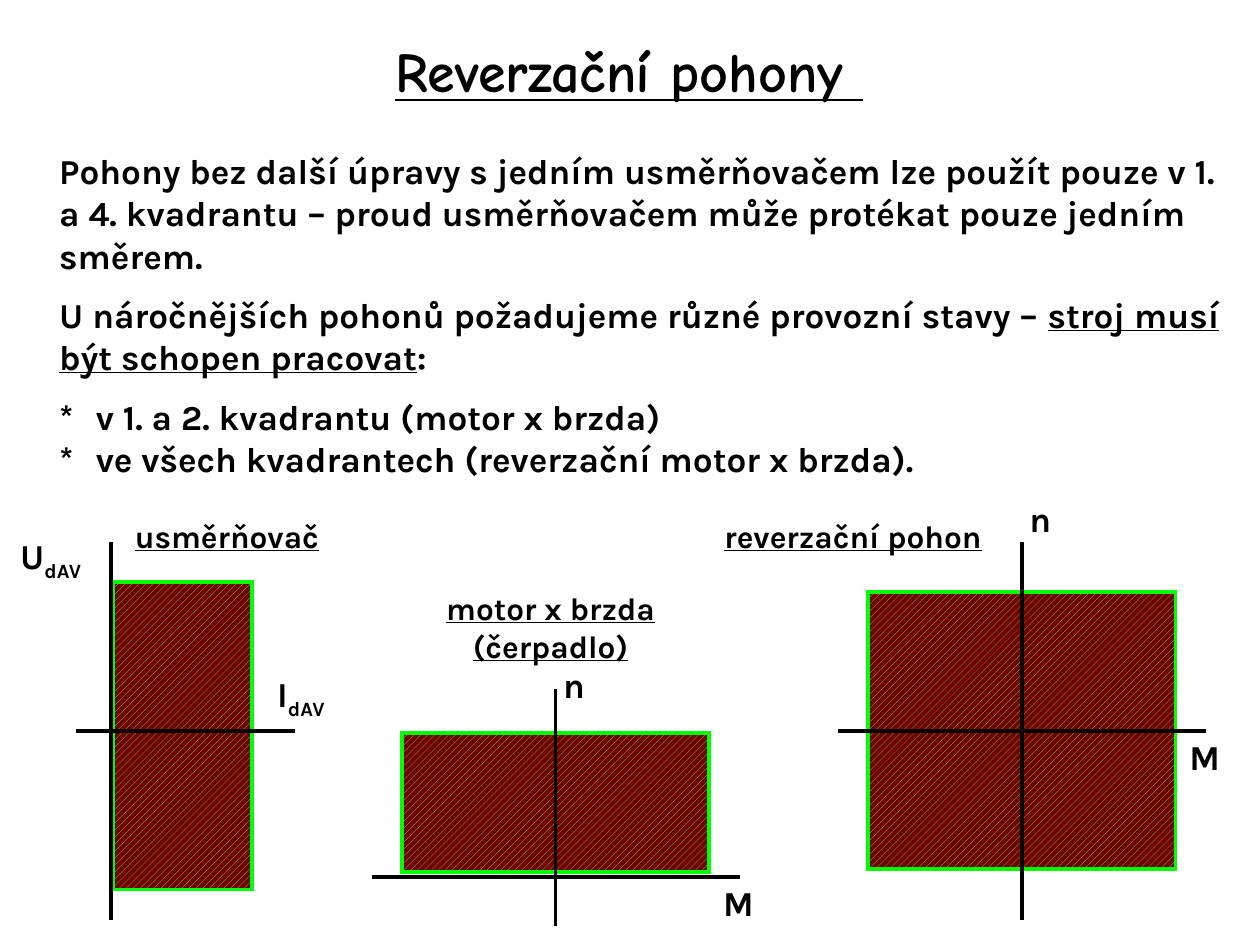
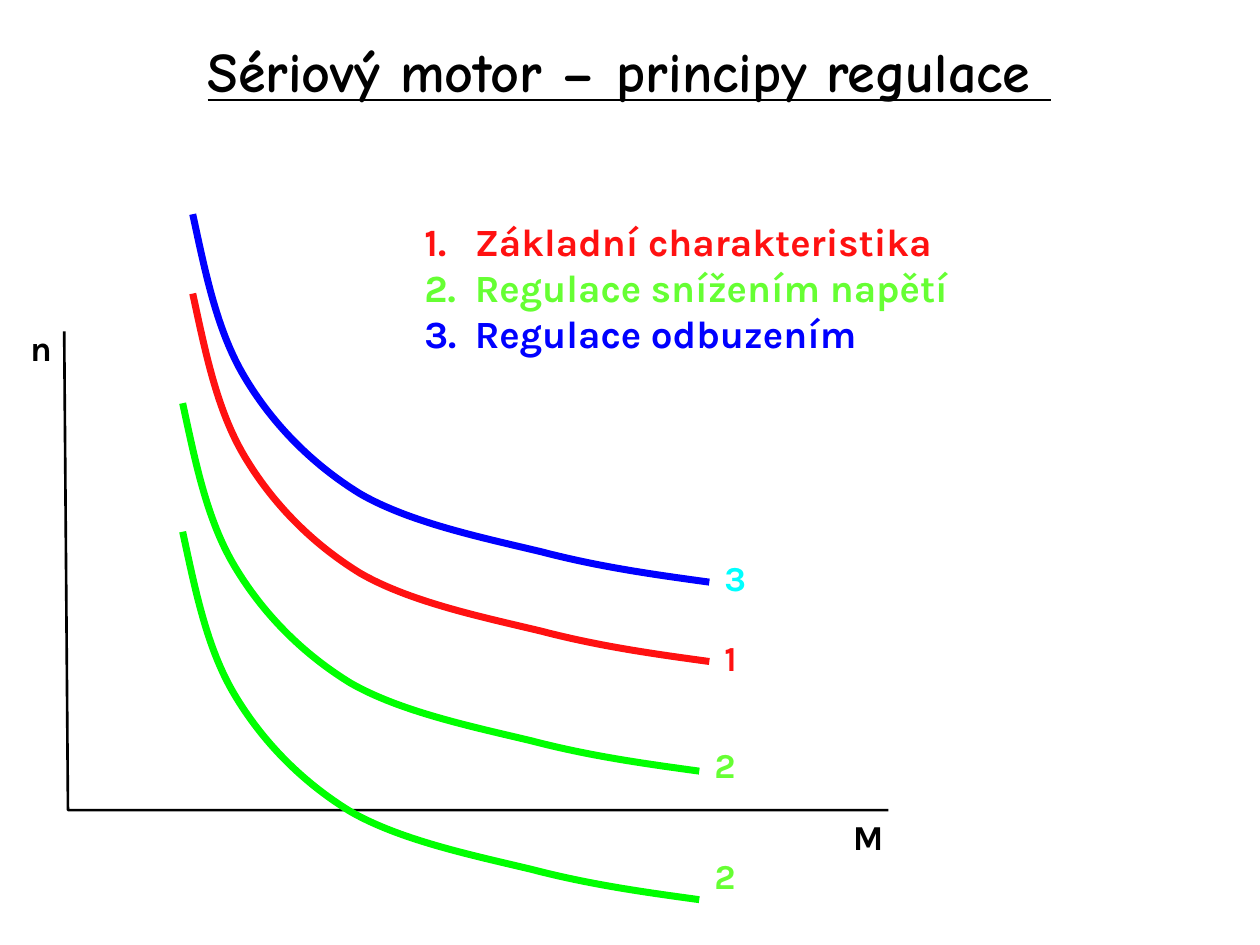
from dataclasses import dataclass
from lxml.etree import SubElement
from pptx import Presentation
from pptx.dml.color import RGBColor
from pptx.enum.dml import MSO_PATTERN
from pptx.enum.shapes import MSO_CONNECTOR, MSO_SHAPE
from pptx.enum.text import MSO_ANCHOR, MSO_AUTO_SIZE, PP_ALIGN
from pptx.oxml.ns import qn
from pptx.util import Inches, Pt


@dataclass(frozen=True)
class Theme:
    black: str = "000000"
    red: str = "FF1111"
    green: str = "00FF00"
    light_green: str = "66FF33"
    blue: str = "0000FF"
    cyan: str = "00FFFF"
    maroon: str = "720000"
    title_font: str = "Comic Neue"
    text_font: str = "Karla"
    title_size: int = 32
    legend_size: int = 22
    text_size: int = 20
    caption_size: int = 18


THEME = Theme()
TITLE_PLACE = (0.19, 0.2, 9.61, 0.72)
UNDERLINED = {"underline": True}
SUBSCRIPT = {"baseline": "-25000"}

DRIVES_TITLE = "Reverzační pohony "
DRIVES_PLACE = (0.43, 1.15, 9.41, 2.75)
# Each paragraph: space before in points, then its runs
DRIVES_TEXT = [
    (0, [("Pohony bez další úpravy s jedním usměrňovačem lze použít pouze v 1. "
          "a 4. kvadrantu – proud usměrňovačem může protékat pouze jedním směrem.", {})]),
    (10, [("U náročnějších pohonů požadujeme různé provozní stavy – ", {}),
          ("stroj musí být schopen pracovat", UNDERLINED), (":", {})]),
    (10, [("*\tv 1. a 2. kvadrantu (motor x brzda)", {})]),
    (0, [("*\tve všech kvadrantech (reverzační motor x brzda).", {})]),
]
STAR_TAB = 0.29

# area: left, top, width, height; origin: where the axes cross;
# vertical and horizontal: start and end of each axis
QUADRANTS = [
    {"area": (6.89, 4.7, 2.44, 2.2), "origin": (8.11, 5.8),
     "vertical": (4.3, 7.3), "horizontal": (6.65, 9.57),
     "labels": [((8.13, 3.91, 0.26, 0.41), [("n", {})]),
                ((9.4, 5.8, 0.33, 0.41), [("M", {})])],
     "caption": ((5.71, 4.06, 2.24, 0.38), ["reverzační pohon"], PP_ALIGN.LEFT)},
    {"area": (3.19, 5.82, 2.44, 1.1), "origin": (4.41, 6.96),
     "vertical": (5.47, 7.35), "horizontal": (2.95, 5.87),
     "labels": [((4.43, 5.23, 0.26, 0.41), [("n", {})]),
                ((5.7, 6.96, 0.33, 0.41), [("M", {})])],
     "caption": ((3.5, 4.64, 1.74, 0.67), ["motor x brzda", "(čerpadlo)"], PP_ALIGN.CENTER)},
    {"area": (0.9, 4.62, 1.1, 2.44), "origin": (0.88, 5.8),
     "vertical": (4.3, 7.3), "horizontal": (0.6, 2.34),
     "labels": [((2.16, 5.32, 0.59, 0.42), [("I", {}), ("dAV", SUBSCRIPT)]),
                ((0.12, 4.22, 0.66, 0.42), [("U", {}), ("dAV", SUBSCRIPT)])],
     "caption": ((1.03, 4.06, 1.6, 0.38), ["usměrňovač"], PP_ALIGN.LEFT)},
]

MOTOR_TITLE = "Sériový motor – principy regulace "
MOTOR_AXES = [(0.51, 2.63), (0.54, 6.43), (7.05, 6.43)]
MOTOR_AXIS_LABELS = [("n", (0.2, 2.55, 0.26, 0.41)), ("M", (6.73, 6.43, 0.33, 0.41))]
LEGEND_PLACE = (3.27, 1.68, 5.83, 1.21)
LEGEND_INDENT = 0.4
LEGEND = [
    ("1.\tZákladní charakteristika", THEME.red),
    ("2.\tRegulace snížením napětí", THEME.light_green),
    ("3.\tRegulace odbuzením", THEME.blue),
]
# Curve start, curve colour, number, number's left and top, number's colour
CURVES = [
    ((1.53, 2.33), THEME.red, "1", (5.71, 5.01), THEME.red),
    ((1.45, 3.2), THEME.green, "2", (5.63, 5.86), THEME.light_green),
    ((1.45, 4.22), THEME.green, "2", (5.63, 6.74), THEME.light_green),
    ((1.53, 1.7), THEME.blue, "3", (5.71, 4.38), THEME.cyan),
]
# Bézier control points of the characteristic, measured from its start
CHARACTERISTIC = [
    (0, 0),
    (0.1, 0.46), (0.19, 0.92), (0.41, 1.29),
    (0.63, 1.66), (0.94, 1.98), (1.33, 2.22),
    (1.73, 2.45), (2.31, 2.57), (2.77, 2.68),
    (3.23, 2.8), (3.66, 2.86), (4.1, 2.92),
]


def inches(lengths):
    return [Inches(length) for length in lengths]


def add_run(paragraph, text, color=THEME.black, size=THEME.text_size,
            font=THEME.text_font, baseline=None, **formats):
    run = paragraph.add_run()
    run.text = text
    formats = {"name": font, "size": Pt(size), "bold": True, **formats}
    for attribute, value in formats.items():
        setattr(run.font, attribute, value)
    run.font.color.rgb = RGBColor.from_string(color)
    if baseline:
        run._r.get_or_add_rPr().set("baseline", baseline)


def add_frame(slide, place, inset=0.04, **formats):
    frame = slide.shapes.add_textbox(*inches(place)).text_frame
    formats = {"word_wrap": True, "auto_size": MSO_AUTO_SIZE.SHAPE_TO_FIT_TEXT, **formats}
    if inset is not None:
        sides = ("left", "top", "right", "bottom")
        formats.update({f"margin_{side}": Inches(inset) for side in sides})
    for attribute, value in formats.items():
        setattr(frame, attribute, value)
    return frame


def paragraphs_for(frame, items):
    """Yield a paragraph of the frame with each item."""
    for index, item in enumerate(items):
        yield (frame.add_paragraph() if index else frame.paragraphs[0]), item


def add_label(slide, place, lines, align=PP_ALIGN.LEFT, **formats):
    """Short unwrapped text; each line is a list of (text, formats) runs."""
    frame = add_frame(slide, place, word_wrap=False, vertical_anchor=MSO_ANCHOR.MIDDLE)
    for paragraph, runs in paragraphs_for(frame, lines):
        paragraph.alignment = align
        for text, extra in runs:
            add_run(paragraph, text, **formats, **extra)


def add_titled_slide(deck, title):
    slide = deck.slides.add_slide(deck.slide_layouts[6])
    frame = add_frame(slide, TITLE_PLACE, inset=None, auto_size=MSO_AUTO_SIZE.NONE,
                      vertical_anchor=MSO_ANCHOR.MIDDLE)
    heading = frame.paragraphs[0]
    heading.alignment = PP_ALIGN.CENTER
    add_run(heading, title, size=THEME.title_size, font=THEME.title_font, underline=True)
    return slide


def set_line(shape, color, width):
    shape.line.color.rgb = RGBColor.from_string(color)
    shape.line.width = Pt(width)


def add_area(slide, place):
    area = slide.shapes.add_shape(MSO_SHAPE.RECTANGLE, *inches(place))
    area.shadow.inherit = False
    area.fill.patterned()
    area.fill.pattern = MSO_PATTERN.WIDE_UPWARD_DIAGONAL
    area.fill.fore_color.rgb = RGBColor.from_string(THEME.light_green)
    area.fill.back_color.rgb = RGBColor.from_string(THEME.maroon)
    set_line(area, THEME.green, 2.25)
    SubElement(area.line._get_or_add_ln(), qn("a:miter"), lim="800000")


def add_axis(slide, start, end):
    axis = slide.shapes.add_connector(MSO_CONNECTOR.STRAIGHT, *inches(start + end))
    set_line(axis, THEME.black, 2)
    SubElement(axis._element.spPr, qn("a:effectLst"))


def add_open_outline(slide, points, color, width):
    start, *rest = [tuple(inches(point)) for point in points]
    builder = slide.shapes.build_freeform(*start)
    builder.add_line_segments(rest, close=False)
    outline = builder.convert_to_shape()
    outline.shadow.inherit = False
    outline.fill.background()
    set_line(outline, color, width)
    return outline


def bend(outline):
    """Turn every three straight segments into one cubic Bézier segment."""
    segments = list(outline._element.iter(qn("a:lnTo")))
    route = segments[0].getparent()
    for first in range(0, len(segments), 3):
        curve = SubElement(route, qn("a:cubicBezTo"))
        for segment in segments[first:first + 3]:
            curve.append(segment[0])
            route.remove(segment)


def build_drives(deck):
    slide = add_titled_slide(deck, DRIVES_TITLE)
    frame = add_frame(slide, DRIVES_PLACE)
    for paragraph, (space, runs) in paragraphs_for(frame, DRIVES_TEXT):
        paragraph.space_before = Pt(space)
        tabs = SubElement(paragraph._p.get_or_add_pPr(), qn("a:tabLst"))
        SubElement(tabs, qn("a:tab"), pos=str(Inches(STAR_TAB)), algn="l")
        for text, extra in runs:
            add_run(paragraph, text, **extra)

    for quadrant in QUADRANTS:
        add_area(slide, quadrant["area"])
        x, y = quadrant["origin"]
        top, bottom = quadrant["vertical"]
        left, right = quadrant["horizontal"]
        add_axis(slide, (x, top), (x, bottom))
        add_axis(slide, (left, y), (right, y))
        for place, runs in quadrant["labels"]:
            add_label(slide, place, [runs])
        place, lines, align = quadrant["caption"]
        add_label(slide, place, [[(line, UNDERLINED)] for line in lines],
                  align=align, size=THEME.caption_size)


def build_motor(deck):
    slide = add_titled_slide(deck, MOTOR_TITLE)
    add_open_outline(slide, MOTOR_AXES, THEME.black, 1.5)
    for name, place in MOTOR_AXIS_LABELS:
        add_label(slide, place, [[(name, {})]])

    frame = add_frame(slide, LEGEND_PLACE, inset=None)
    for paragraph, (entry, color) in paragraphs_for(frame, LEGEND):
        indent = Inches(LEGEND_INDENT)
        properties = paragraph._p.get_or_add_pPr()
        properties.set("marL", str(indent))
        properties.set("indent", str(-indent))
        add_run(paragraph, entry, color=color, size=THEME.legend_size)

    for (left, top), color, number, corner, number_color in CURVES:
        points = [(left + x, top + y) for x, y in CHARACTERISTIC]
        bend(add_open_outline(slide, points, color, 4))
        add_label(slide, (*corner, 0.26, 0.41), [[(number, {})]], color=number_color)


def main():
    deck = Presentation()
    deck.slide_width, deck.slide_height = Inches(10), Inches(7.5)
    build_drives(deck)
    build_motor(deck)
    deck.save("out.pptx")


if __name__ == "__main__":
    main()
